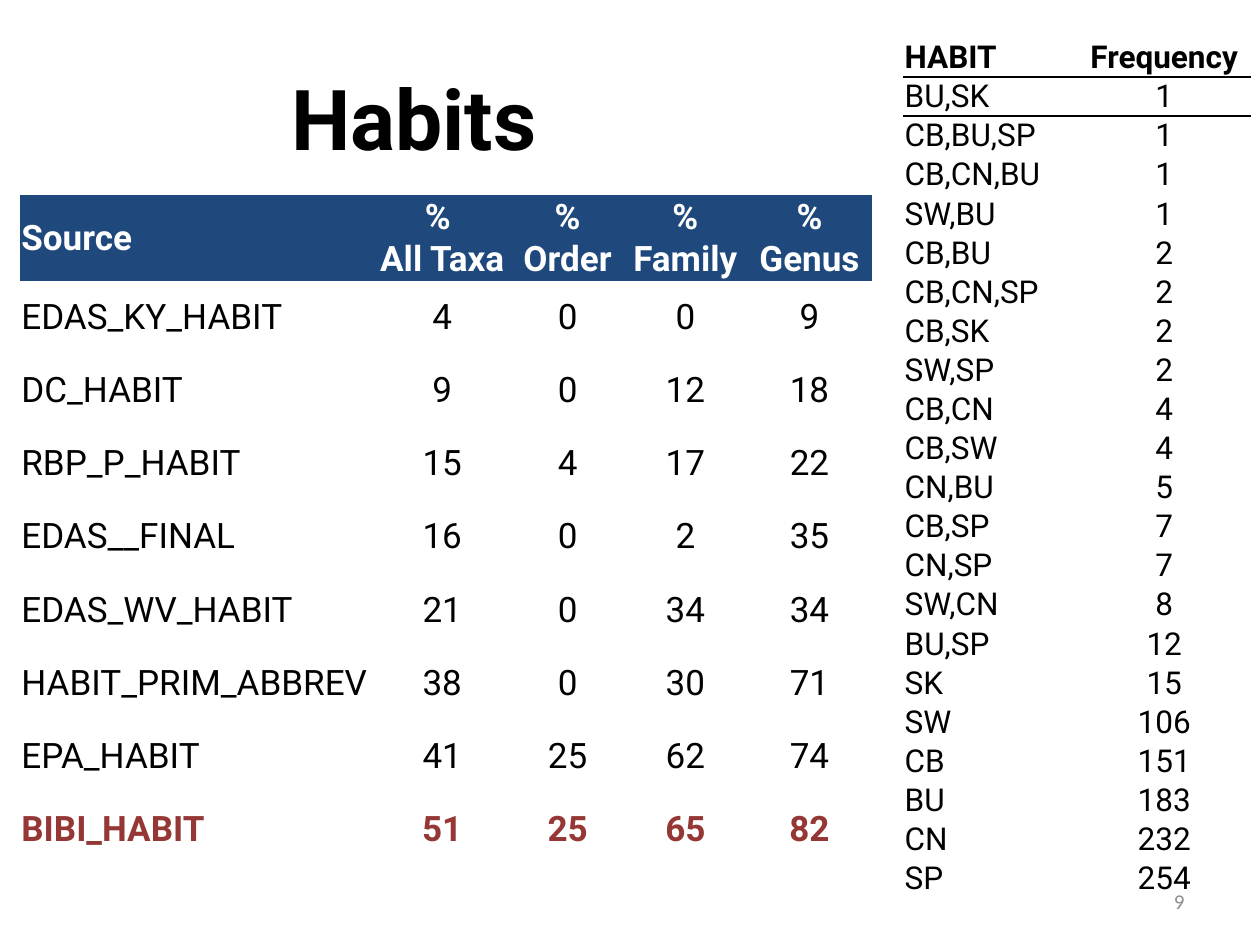
import pptx
import pptx.util
import pptx.dml.color
import pptx.enum.text
import pptx.oxml
import pptx.oxml.ns

Inches = pptx.util.Inches
Pt = pptx.util.Pt
Align = pptx.enum.text.PP_ALIGN
Anchor = pptx.enum.text.MSO_ANCHOR

BLACK, WHITE, NAVY, RED, GREY = "000000", "FFFFFF", "1F497D", "953735", "8C8C8C"
PLAIN = "{2D5ABB26-0587-4C30-8999-92F81FD0307C}"  # no style, no grid

HABITS = [
    ("HABIT", "Frequency"),
    ("BU,SK", 1), ("CB,BU,SP", 1), ("CB,CN,BU", 1), ("SW,BU", 1),
    ("CB,BU", 2), ("CB,CN,SP", 2), ("CB,SK", 2), ("SW,SP", 2),
    ("CB,CN", 4), ("CB,SW", 4), ("CN,BU", 5), ("CB,SP", 7),
    ("CN,SP", 7), ("SW,CN", 8), ("BU,SP", 12), ("SK", 15),
    ("SW", 106), ("CB", 151), ("BU", 183), ("CN", 232), ("SP", 254),
]
SOURCES = [
    ("Source", "% \nAll Taxa", "% Order", "% Family", "% Genus"),
    ("EDAS_KY_HABIT", 4, 0, 0, 9),
    ("DC_HABIT", 9, 0, 12, 18),
    ("RBP_P_HABIT", 15, 4, 17, 22),
    ("EDAS__FINAL", 16, 0, 2, 35),
    ("EDAS_WV_HABIT", 21, 0, 34, 34),
    ("HABIT_PRIM_ABBREV", 38, 0, 30, 71),
    ("EPA_HABIT", 41, 25, 62, 74),
    ("BIBI_HABIT", 51, 25, 65, 82),
]


def rgb(code):
    return pptx.dml.color.RGBColor.from_string(code)


def write(frame, text, size, color, bold, align, face="Roboto"):
    frame.text = str(text)
    for para in frame.paragraphs:
        para.alignment = align
        font = para.font
        font.name, font.size, font.bold = face, Pt(size), bold
        font.color.rgb = rgb(color)


def label(slide, box, *style):
    frame = slide.shapes.add_textbox(*map(Inches, box)).text_frame
    frame.word_wrap = True
    frame.vertical_anchor = Anchor.MIDDLE
    write(frame, *style)


def rule(cell, side):
    """Draw a 1 pt black border on one side of a cell."""
    line = pptx.oxml.parse_xml(
        f'<a:{side} {pptx.oxml.ns.nsdecls("a")} w="12700"><a:solidFill>'
        f'<a:srgbClr val="{BLACK}"/></a:solidFill></a:{side}>')
    cell._tc.get_or_add_tcPr().insert(0, line)


def grid(slide, rows, left, top, widths, high, size, look):
    """Add a table; look(row) gives text colour, bold and fill."""
    frame = slide.shapes.add_table(
        len(rows), len(widths), Inches(left), Inches(top),
        Inches(sum(widths)), Inches(high * len(rows)))
    table = frame.table
    table.first_row = table.horz_banding = False
    table._tbl.tblPr.find(pptx.oxml.ns.qn("a:tableStyleId")).text = PLAIN
    for col, width in zip(table.columns, widths):
        col.width = Inches(width)
    for r, row in enumerate(rows):
        table.rows[r].height = Inches(high)
        color, bold, fill = look(r)
        for c, value in enumerate(row):
            cell = table.cell(r, c)
            cell.margin_left = cell.margin_right = cell.margin_top = Inches(0.01)
            cell.margin_bottom = 0
            cell.vertical_anchor = Anchor.MIDDLE
            if fill:
                cell.fill.solid()
                cell.fill.fore_color.rgb = rgb(fill)
            else:
                cell.fill.background()
            write(cell.text_frame, value, size, color, bold,
                  Align.CENTER if c else Align.LEFT)
    return table


def source_look(r):
    if r == 0:
        return WHITE, True, NAVY
    if r == len(SOURCES) - 1:
        return RED, True, None
    return BLACK, False, None


def habit_look(r):
    return BLACK, r == 0, None


def main():
    deck = pptx.Presentation()
    deck.slide_width, deck.slide_height = Inches(10), Inches(7.5)
    slide = deck.slides.add_slide(deck.slide_layouts[6])

    label(slide, (0.16, 0.3, 6.25, 1.25), "Habits", 48, BLACK, True, Align.CENTER)
    counts = grid(slide, HABITS, 7.17, 0.3, (1.38, 1.38), 0.28, 18, habit_look)
    for c in range(2):
        rule(counts.cell(0, c), "lnB")
        rule(counts.cell(1, c), "lnT")
    grid(slide, SOURCES, 0.16, 1.55, (2.8, 1.1, 0.89, 0.98, 0.99), 0.58, 20,
         source_look)
    label(slide, (7.17, 6.95, 2.33, 0.4), "9", 12, GREY, False, Align.RIGHT,
          "Calibri")
    deck.save("out.pptx")


if __name__ == "__main__":
    main()
